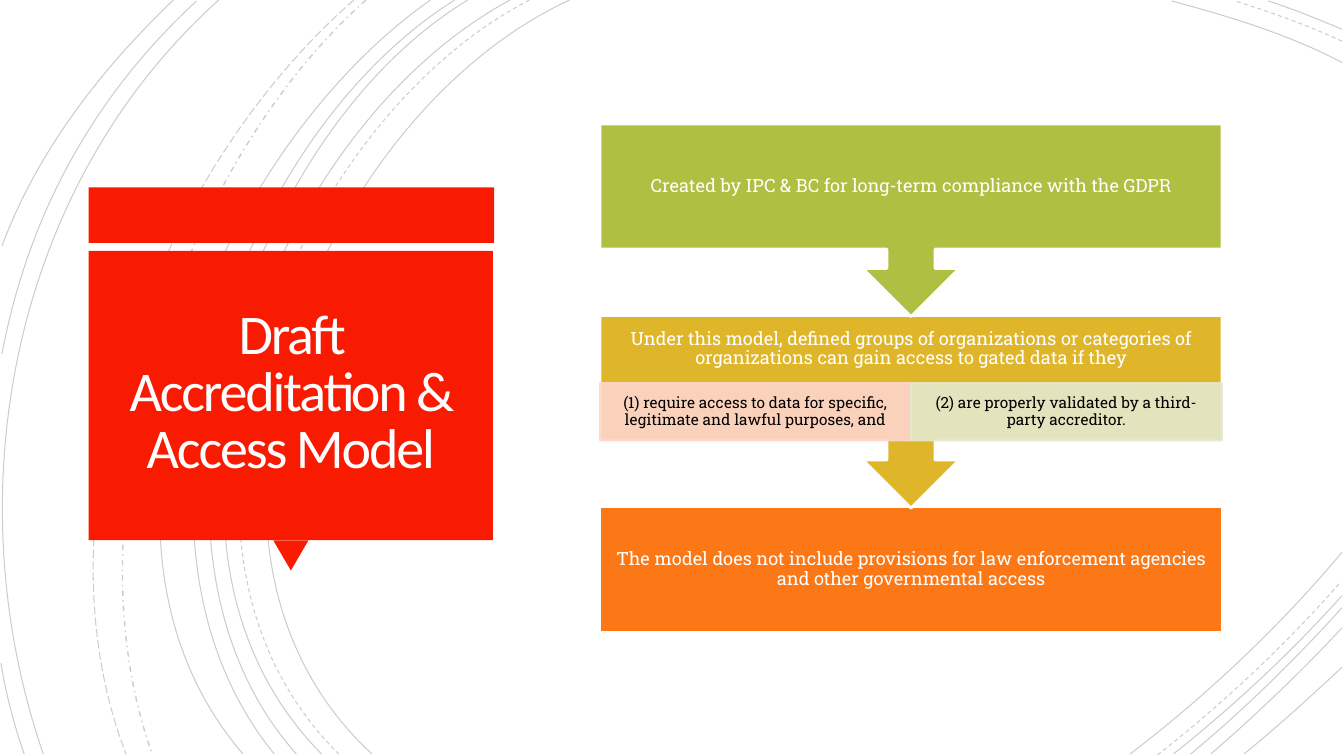
from lxml.etree import SubElement
from pptx import Presentation
from pptx.dml.color import RGBColor
from pptx.enum.dml import MSO_LINE_DASH_STYLE as Dash
from pptx.enum.shapes import MSO_SHAPE as Shape
from pptx.enum.text import MSO_ANCHOR, PP_ALIGN
from pptx.oxml.ns import qn
from pptx.util import Cm, Pt

TITLE = "Draft Accreditation & Access Model"
STEPS = [  # text, colour, height of the text area
    ("Created by IPC & BC for long-term compliance with the GDPR", "AFBF41", 1.24),
    ("Under this model, defined groups of organizations or categories of "
     "organizations can gain access to gated data if they", "DFB62A", 0.67),
    ("The model does not include provisions for law enforcement agencies "
     "and other governmental access", "FC7715", 1.24),
]
CONDITIONS = [
    ("(1) require access to data for specific, legitimate and lawful purposes, and", "FED6CC"),
    ("(2) are properly validated by a third-party accreditor.", "E4E8CF"),
]
RED, WHITE, BLACK = "F81B02", "FFFFFF", "000000"

# Background arcs in inches: start, two control points, end
ARCS = {
    (Dash.SOLID, 0.75): [
        ((5.65, 0), (3.15, 1.15), (1.43, 5.4), (3.69, 7.48)),
        ((13.31, 0.62), (12.78, 0.34), (12.18, 0.16), (11.62, 0.01)),
        ((11.21, 7.48), (11.97, 6.9), (12.69, 6.22), (13.31, 5.48)),
        ((5.06, 0), (2.7, 1.27), (1.1, 5.37), (3.19, 7.48)),
        ((13.31, 0.29), (13.07, 0.19), (12.83, 0.09), (12.58, 0.01)),
        ((11.64, 7.48), (12.23, 7.01), (12.8, 6.48), (13.31, 5.91)),
        ((4.64, 0), (2.44, 1.33), (1.1, 5.41), (2.94, 7.48)),
        ((11.81, 7.48), (12.34, 7.04), (12.84, 6.55), (13.31, 6.03)),
        ((4.51, 0), (2.31, 1.38), (0.97, 5.33), (2.72, 7.48)),
        ((12.01, 7.48), (12.46, 7.09), (12.9, 6.67), (13.31, 6.23)),
        ((4.27, 0), (2.17, 1.47), (0.53, 5.29), (2.41, 7.48)),
        ((12.34, 7.48), (12.67, 7.21), (12.99, 6.92), (13.31, 6.62)),
        ((2.17, 0), (0.11, 1.85), (-0.46, 4.9), (0.43, 7.48)),
        ((1.95, 0.01), (0.92, 0.96), (0.28, 2.14), (0.02, 3.51)),
        ((0.01, 6.58), (0.06, 6.89), (0.14, 7.19), (0.24, 7.48)),
        ((1.72, 0), (1, 0.69), (0.37, 1.5), (0.02, 2.44)),
    ],
    (Dash.DASH, 0.75): [
        ((5.25, 0), (2.85, 1.25), (1.23, 5.37), (3.36, 7.48)),
        ((13.31, 0.41), (12.97, 0.25), (12.6, 0.12), (12.25, 0.01)),
        ((11.48, 7.49), (12.13, 6.98), (12.75, 6.4), (13.3, 5.77)),
    ],
    (Dash.DASH_DOT, 1): [((3.63, 0), (1.76, 1.66), (0.65, 5.09), (1.51, 7.48))],
    (Dash.LONG_DASH, 0.75): [((3.51, 0), (1.57, 1.69), (0.29, 4.99), (1.25, 7.48))],
}

FLOW_LEFT, FLOW_TOP, FLOW_WIDTH = 5.95, 1.23, 6.17
STEP_PITCH, CALLOUT_HEIGHT, BOX_HEIGHT = 1.9, 1.91, 1.24
CONDITION_HEIGHT = 0.57


def inches(value):
    return Cm(value * 2.54)


def paint(fill, color, opacity=100):
    fill.solid()
    fill.fore_color.rgb = RGBColor.from_string(color)
    if opacity < 100:
        for rgb in fill._xPr.iter(qn("a:srgbClr")):
            SubElement(rgb, qn("a:alpha")).set("val", str(opacity * 1000))


def add_arc(shapes, points, dash, width):
    """Draw one cubic curve; the builder's three straight segments become its control points."""
    start, *others = [tuple(inches(v) for v in point) for point in points]
    builder = shapes.build_freeform(*start)
    builder.add_line_segments(others, close=False)
    arc = builder.convert_to_shape()
    segments = list(arc._element.iter(qn("a:lnTo")))
    outline = segments[0].getparent()
    curve = SubElement(outline, qn("a:cubicBezTo"))
    for segment in segments:
        curve.append(segment[0])
        outline.remove(segment)
    arc.shadow.inherit = False
    arc.fill.background()
    paint(arc.line.fill, BLACK, 20)
    arc.line.width, arc.line.dash_style = Pt(width), dash


def add_block(shapes, kind, box, color, line=None, line_width=2, opacity=100, rotation=0):
    block = shapes.add_shape(kind, *map(inches, box))
    block.shadow.inherit = False
    block.rotation = rotation
    paint(block.fill, color, opacity)
    if line:
        paint(block.line.fill, line, opacity)
        block.line.width = Pt(line_width)
    else:
        block.line.fill.background()
    return block


def write(shape, text, size, color=WHITE, font="Roboto Slab", spacing=0.9, insets=(0.1, 0.1)):
    side, end = map(inches, insets)
    frame = shape.text_frame
    frame_format = {"word_wrap": True, "vertical_anchor": MSO_ANCHOR.MIDDLE,
                    "margin_left": side, "margin_right": side,
                    "margin_top": end, "margin_bottom": end}
    for name, value in frame_format.items():
        setattr(frame, name, value)
    paragraph = frame.paragraphs[0]
    paragraph.alignment, paragraph.line_spacing = PP_ALIGN.CENTER, spacing
    run = paragraph.add_run()
    run.text = text
    run.font.name, run.font.size = font, Pt(size)
    paint(run.font.fill, color)
    return run


def add_title(shapes):
    add_block(shapes, Shape.RECTANGLE, (0.88, 1.86, 4.02, 0.55), RED)
    add_block(shapes, Shape.ISOSCELES_TRIANGLE, (2.71, 5.36, 0.35, 0.3), RED, rotation=180)
    add_block(shapes, Shape.RECTANGLE, (0.88, 2.49, 4.01, 2.87), RED)
    title = shapes.add_textbox(*map(inches, (0.97, 2.57, 3.83, 2.69)))
    run = write(title, TITLE, 40, "FFFEFF", "Calibri", 0.85, (0.25, 0.25))
    run.font._element.set("spc", "-150")


def add_conditions(shapes, top):
    width = FLOW_WIDTH / len(CONDITIONS)
    for column, (text, color) in enumerate(CONDITIONS):
        box = (FLOW_LEFT + column * width, top, width, CONDITION_HEIGHT)
        condition = add_block(shapes, Shape.RECTANGLE, box, color, color, 1.25, 90)
        write(condition, text, 11, BLACK, insets=(0.09, 0.02))


def add_flow(shapes):
    """Stack the steps from the last to the first, so each arrow tip lies over the next step."""
    last = len(STEPS) - 1
    for index, (text, color, text_height) in reversed(list(enumerate(STEPS))):
        top = FLOW_TOP + index * STEP_PITCH
        if index == last:
            label = add_block(shapes, Shape.RECTANGLE,
                              (FLOW_LEFT, top, FLOW_WIDTH, BOX_HEIGHT), color, WHITE)
        else:
            add_block(shapes, Shape.UP_ARROW_CALLOUT,
                      (FLOW_LEFT, top, FLOW_WIDTH, CALLOUT_HEIGHT), color, WHITE, rotation=180)
            label = shapes.add_textbox(*map(inches, (FLOW_LEFT, top, FLOW_WIDTH, text_height)))
        write(label, text, 13)
        if text_height < BOX_HEIGHT:
            add_conditions(shapes, top + text_height)


def main():
    deck = Presentation()
    deck.slide_width, deck.slide_height = inches(13.33), inches(7.5)
    slide = deck.slides.add_slide(deck.slide_layouts[6])
    paint(slide.background.fill, WHITE)
    for (dash, width), arcs in ARCS.items():
        for points in arcs:
            add_arc(slide.shapes, points, dash, width)
    add_title(slide.shapes)
    add_flow(slide.shapes)
    deck.save("out.pptx")


if __name__ == "__main__":
    main()
